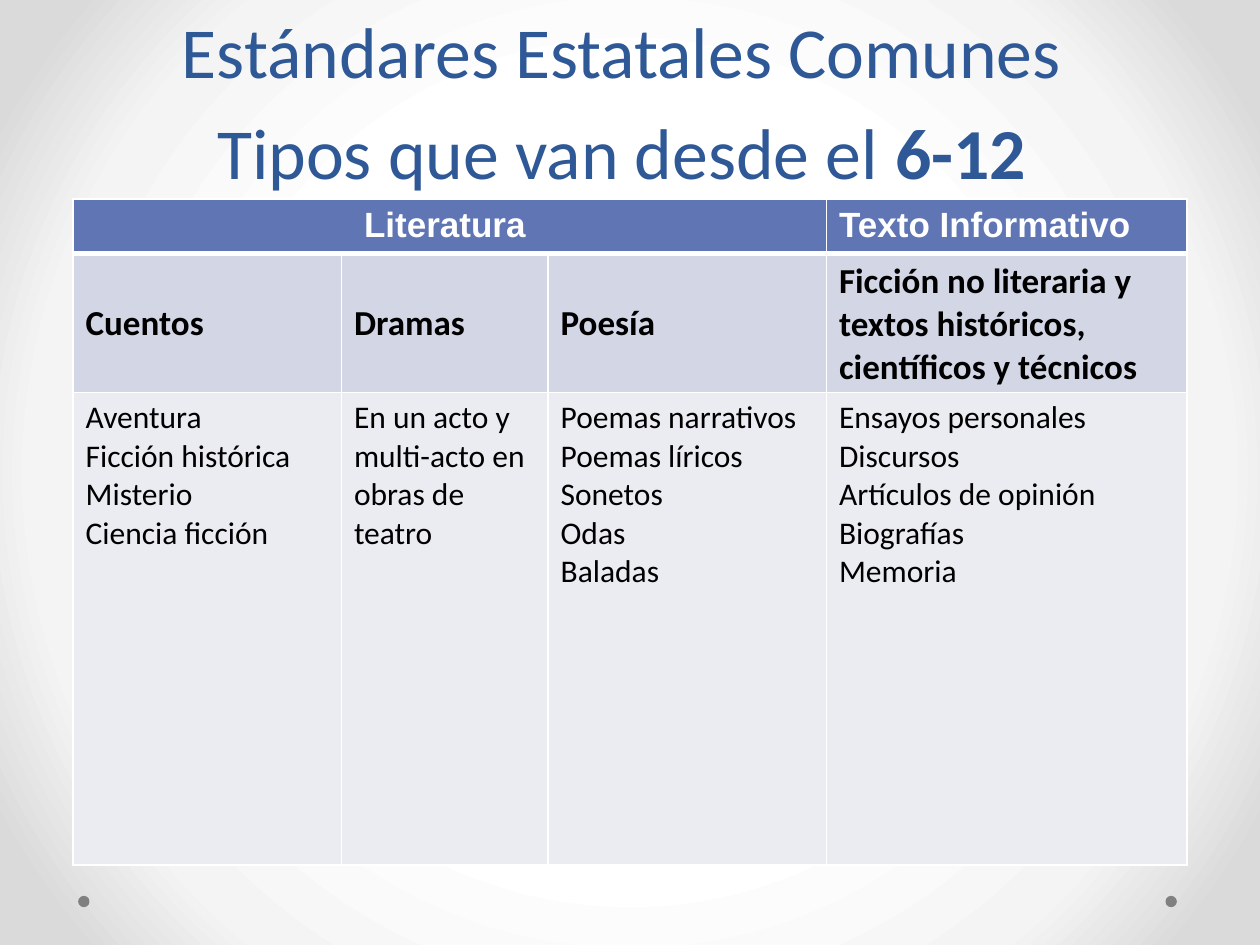
from lxml.etree import SubElement
from pptx import Presentation
from pptx.dml.color import RGBColor
from pptx.enum.shapes import MSO_SHAPE
from pptx.enum.text import MSO_ANCHOR, PP_ALIGN
from pptx.oxml.ns import qn
from pptx.util import Inches, Pt

BACKGROUND_STOPS = [(50, "FFFFFF"), (76, "F4F4F4"), (92, "DADADA")]
TITLE_LINES = [
    [("Estándares Estatales Comunes ", False)],
    [("Tipos que van desde el ", False), ("6-12 ", True)],
]
COLUMN_WIDTHS = [2.13, 1.64, 2.21, 2.86]
# Each cell is a list of paragraphs
ROWS = [
    [["Literatura "], [], [], ["Texto Informativo"]],
    [["Cuentos"], ["Dramas"], ["Poesía"],
     ["Ficción no literaria y textos históricos, científicos y técnicos"]],
    [["Aventura", "Ficción histórica Misterio", "Ciencia ficción"],
     ["En un acto y multi-acto en obras de teatro"],
     ["Poemas narrativos", "Poemas líricos", "Sonetos", "Odas", "Baladas"],
     ["Ensayos personales", "Discursos", "Artículos de opinión", "Biografías", "Memoria"]],
]
ROW_STYLES = [
    {"height": 0.43, "fill": "6076B4", "color": "FFFFFF", "bottom": 3,
     "anchor": MSO_ANCHOR.TOP, "font": {"name": "Arial", "size": Pt(20), "bold": True}},
    {"height": 1.07, "fill": "D2D6E5", "color": "000000", "bottom": 1,
     "anchor": MSO_ANCHOR.MIDDLE, "font": {"name": "Calibri", "size": Pt(20), "bold": True}},
    {"height": 3.75, "fill": "EAECF2", "color": "000000", "bottom": 1,
     "anchor": MSO_ANCHOR.TOP, "font": {"name": "Calibri", "size": Pt(18), "bold": False}},
]


def rgb(value):
    return RGBColor.from_string(value)


def add_run(paragraph, text, color, font):
    run = paragraph.add_run()
    run.text = text
    run.font.color.rgb = rgb(color)
    for name, value in font.items():
        setattr(run.font, name, value)


def add_solid_fill(parent, color):
    SubElement(SubElement(parent, qn("a:solidFill")), qn("a:srgbClr"), val=color)


def set_background(slide):
    """Fill the background with a gradient that spreads from the centre."""
    slide.background.fill.gradient()
    gradient = slide.element.find(".//" + qn("a:gradFill"))
    for child in list(gradient):
        gradient.remove(child)
    stops = SubElement(gradient, qn("a:gsLst"))
    for position, color in BACKGROUND_STOPS:
        stop = SubElement(stops, qn("a:gs"), pos=str(position * 1000))
        SubElement(stop, qn("a:srgbClr"), val=color)
    circle = SubElement(gradient, qn("a:path"), path="circle")
    SubElement(circle, qn("a:fillToRect"), {side: "50000" for side in "ltrb"})


def add_dot(slide, left):
    dot = slide.shapes.add_shape(
        MSO_SHAPE.OVAL, Inches(left), Inches(7.11), Inches(0.09), Inches(0.09))
    dot.shadow.inherit = False
    dot.fill.solid()
    dot.fill.fore_color.rgb = rgb("808080")
    dot.line.fill.background()


def add_title(slide):
    box = slide.shapes.add_textbox(Inches(0.5), Inches(0.17), Inches(9), Inches(1.42))
    frame = box.text_frame
    frame.word_wrap = True
    frame.vertical_anchor = MSO_ANCHOR.BOTTOM
    paragraph = frame.paragraphs[0]
    paragraph.alignment = PP_ALIGN.CENTER
    paragraph.line_spacing = Pt(58)
    for index, line in enumerate(TITLE_LINES):
        if index:
            paragraph.add_line_break()
        for text, bold in line:
            add_run(paragraph, text, "2F5897",
                    {"name": "Calibri", "size": Pt(41), "bold": bold})


def set_borders(cell, top, bottom):
    properties = cell._tc.get_or_add_tcPr()
    for side, width in (("L", 1), ("R", 1), ("T", top), ("B", bottom)):
        line = SubElement(properties, qn("a:ln" + side), w=str(Pt(width)))
        add_solid_fill(line, "FFFFFF")


def fill_cell(cell, paragraphs, style, top):
    set_borders(cell, top, style["bottom"])
    cell.fill.solid()
    cell.fill.fore_color.rgb = rgb(style["fill"])
    cell.vertical_anchor = style["anchor"]
    frame = cell.text_frame
    for index, text in enumerate(paragraphs):
        paragraph = frame.add_paragraph() if index else frame.paragraphs[0]
        add_run(paragraph, text, style["color"], style["font"])


def add_genre_table(slide):
    height = sum(style["height"] for style in ROW_STYLES)
    table = slide.shapes.add_table(
        len(ROWS), len(COLUMN_WIDTHS), Inches(0.58), Inches(1.58),
        Inches(sum(COLUMN_WIDTHS)), Inches(height)).table
    for column, width in zip(table.columns, COLUMN_WIDTHS):
        column.width = Inches(width)
    top = 1
    for row, contents, style in zip(table.rows, ROWS, ROW_STYLES):
        row.height = Inches(style["height"])
        for cell, paragraphs in zip(row.cells, contents):
            fill_cell(cell, paragraphs, style, top)
        top = style["bottom"]
    literature = table.cell(0, 0)
    literature.merge(table.cell(0, 2))
    literature.text_frame.paragraphs[0].alignment = PP_ALIGN.CENTER
    table.cell(1, 3).vertical_anchor = MSO_ANCHOR.TOP


def main():
    presentation = Presentation()
    presentation.slide_width = Inches(10)
    presentation.slide_height = Inches(7.5)
    slide = presentation.slides.add_slide(presentation.slide_layouts[6])
    set_background(slide)
    for left in (9.25, 0.62):
        add_dot(slide, left)
    add_title(slide)
    add_genre_table(slide)
    presentation.save("out.pptx")


if __name__ == "__main__":
    main()
